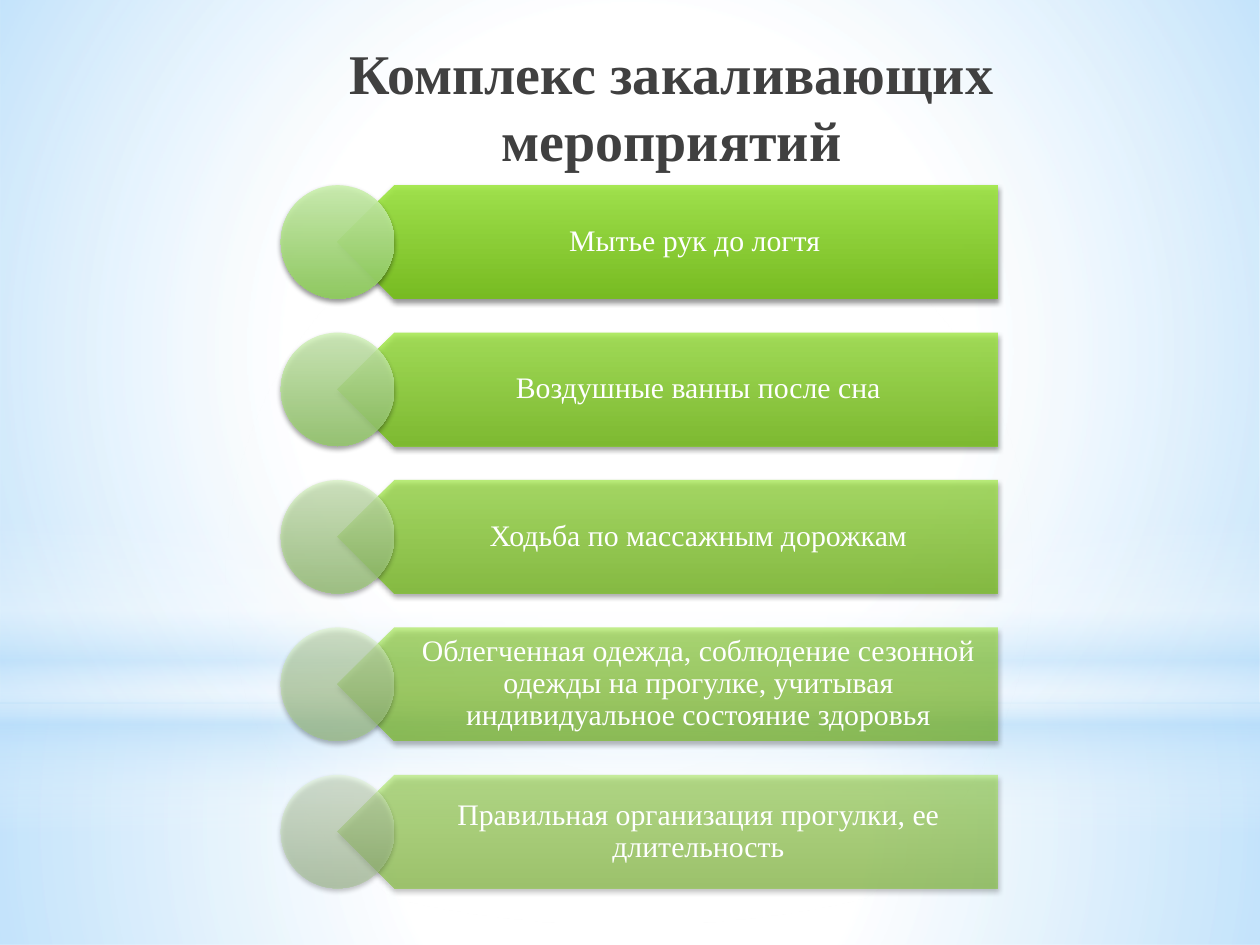
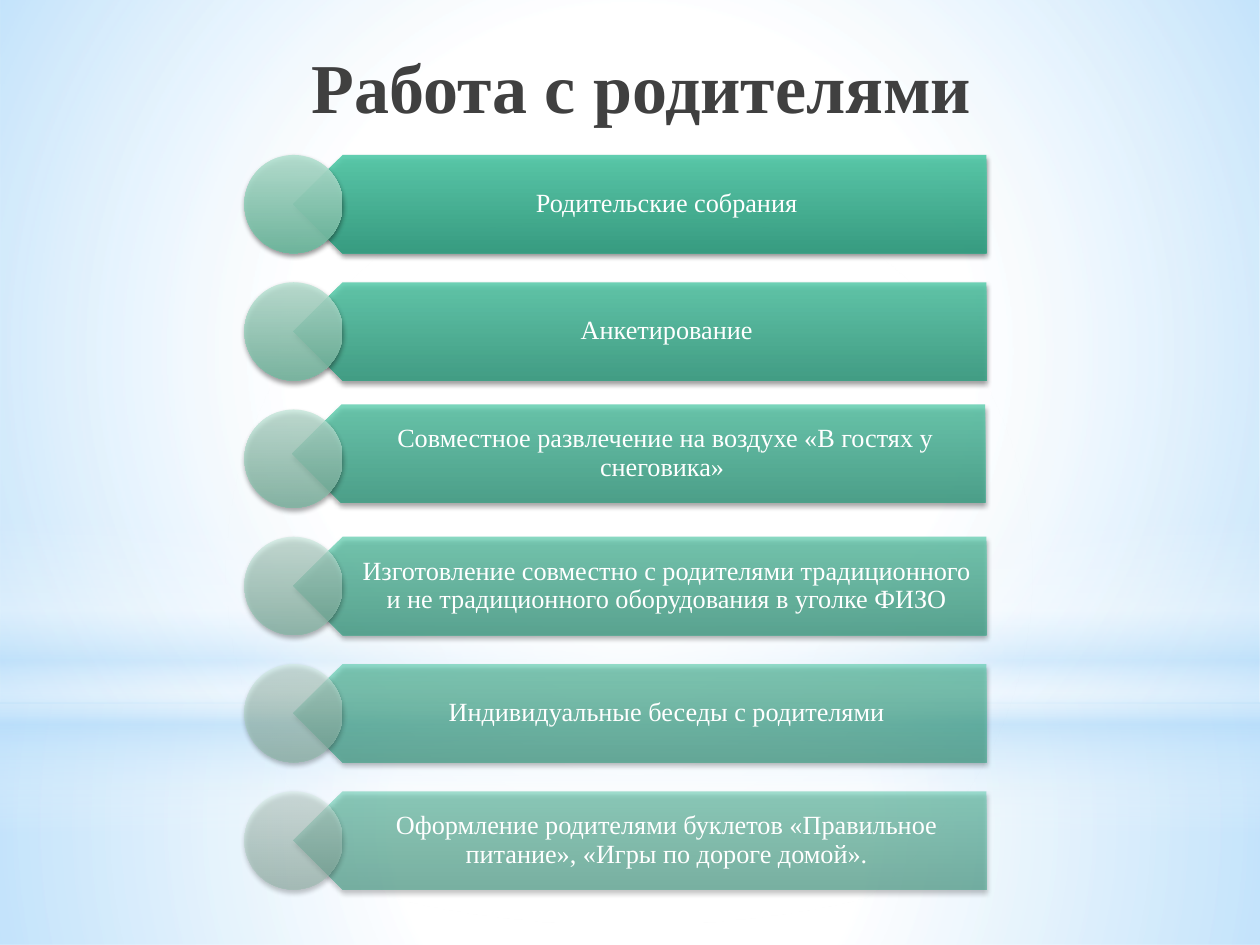
import dataclasses

import lxml.etree
import pptx
import pptx.dml.color
import pptx.enum.shapes
import pptx.enum.text
import pptx.oxml.ns
import pptx.util

COLUMNS, ROWS = 100, 75
CELL = pptx.util.Inches(0.1)
SHAPES = pptx.enum.shapes.MSO_SHAPE


@dataclasses.dataclass(frozen=True)
class Theme:
    font: str = "Times New Roman"
    white: str = "FFFFFF"
    sky: str = "B4DCFA"
    title: str = "404040"
    shadow: str = "000000"
    green: tuple = ("A0E844", "75C016")
    green_discs: tuple = (("CDF2B0", "8FCE5C"), ("E3F7D5", "A0C089"))
    teal: tuple = ("52CBA9", "2E9D7F")
    teal_discs: tuple = (("B5E2D2", "6BB89D"), ("D9EFE7", "90B6A8"))
    long_title: int = 32
    short_title: int = 40
    large_label: int = 17
    small_label: int = 15
    opaque: int = 90
    faded: int = 50


THEME = Theme()


@dataclasses.dataclass(frozen=True)
class Box:
    left: float
    top: float
    width: float
    height: float

    def emu(self):
        return [round(side * CELL) for side in dataclasses.astuple(self)]

    def inner(self, left, top, width, height):
        return Box(self.left + left, self.top + top, width, height)


PAGE = Box(0, 0, COLUMNS, ROWS)


def add_node(parent, tag, **attributes):
    node = lxml.etree.SubElement(parent, pptx.oxml.ns.qn(tag))
    for name, value in attributes.items():
        node.set(name, str(value))
    return node


def add_gradient_shape(page, kind, box, stops, radial=False):
    shape = page.shapes.add_shape(kind, *box.emu())
    shape.shadow.inherit = False
    shape.line.fill.background()
    shape.fill.background()
    properties = shape.element.spPr
    gradient = add_node(properties, "a:gradFill", rotWithShape=1)
    properties.replace(properties.find(pptx.oxml.ns.qn("a:noFill")), gradient)
    stop_list = add_node(gradient, "a:gsLst")
    for position, color, opacity in stops:
        stop = add_node(stop_list, "a:gs", pos=position * 1000)
        tint = add_node(stop, "a:srgbClr", val=color)
        add_node(tint, "a:alpha", val=round(opacity * 1000))
    if radial:
        focus = add_node(gradient, "a:path", path="circle")
        add_node(focus, "a:fillToRect", **dict.fromkeys("ltrb", 50000))
    else:
        add_node(gradient, "a:lin", ang=90 * 60000, scaled=0)
    return shape


def add_shadow(shape):
    effects = shape.element.spPr.find(pptx.oxml.ns.qn("a:effectLst"))
    shadow = add_node(effects, "a:outerShdw", blurRad=pptx.util.Pt(3.1),
                      dist=pptx.util.Pt(1.8), dir=90 * 60000, rotWithShape=0)
    tint = add_node(shadow, "a:srgbClr", val=THEME.shadow)
    add_node(tint, "a:alpha", val=45000)


def add_text(page, box, text, *, size, color, bold=False, spacing=1.0, insets=(1, 0.5, 1, 0.5)):
    frame = page.shapes.add_textbox(*box.emu()).text_frame
    frame.word_wrap = True
    frame.vertical_anchor = pptx.enum.text.MSO_ANCHOR.MIDDLE
    (frame.margin_left, frame.margin_top,
     frame.margin_right, frame.margin_bottom) = [round(inset * CELL) for inset in insets]
    para = frame.paragraphs[0]
    para.alignment = pptx.enum.text.PP_ALIGN.CENTER
    para.line_spacing = spacing
    span = para.add_run()
    span.text = text
    span.font.name = THEME.font
    span.font.size = pptx.util.Pt(size)
    span.font.bold = bold
    span.font.color.rgb = pptx.dml.color.RGBColor.from_string(color)


def add_backdrop(page, box):
    page.background.fill.solid()
    page.background.fill.fore_color.rgb = pptx.dml.color.RGBColor.from_string(THEME.white)
    white, sky = THEME.white, THEME.sky
    horizon = 55.8
    add_gradient_shape(page, SHAPES.RECTANGLE,
                       box.inner(0, horizon, box.width, box.height - horizon),
                       [(0, white, 91), (37, white, 76), (100, sky, 79)], radial=True)
    add_gradient_shape(page, SHAPES.RECTANGLE, box.inner(0, 0, box.width, horizon),
                       [(0, white, 89), (48, white, 62), (100, sky, 79)], radial=True)
    add_gradient_shape(page, SHAPES.RECTANGLE, box.inner(0, 41.2, box.width, 25),
                       [(0, white, 0), (29, white, 30), (45, sky, 40),
                        (55, white, 26), (65, sky, 60), (100, white, 0)])
    add_gradient_shape(page, SHAPES.OVAL, box.inner(0, 17.5, box.width, horizon),
                       [(0, white, 100), (56, white, 0)], radial=True)


def blend(start, end, share):
    pairs = zip(bytes.fromhex(start), bytes.fromhex(end))
    return "".join(f"{round(a + (b - a) * share):02X}" for a, b in pairs)


def add_row(page, box, label, *, size, plate_colors, disc_colors, opacity, nudge):
    side = box.height
    plate_box = box.inner(side / 2 + nudge[0], nudge[1], box.width - side / 2, side)
    plate = add_gradient_shape(page, SHAPES.PENTAGON, plate_box,
                               [(0, plate_colors[0], opacity), (100, plate_colors[1], opacity)])
    plate.element.spPr.find(pptx.oxml.ns.qn("a:xfrm")).set("flipH", "1")
    add_shadow(plate)
    add_text(page, plate_box.inner(side / 4, 0, plate_box.width - side / 4, side), label,
             size=size, color=THEME.white, spacing=0.9,
             insets=[side * share for share in (0.44, 0.08, 0.15, 0.08)])
    disc = add_gradient_shape(page, SHAPES.OVAL, box.inner(0, 0, side, side),
                              [(0, disc_colors[0], opacity), (100, disc_colors[1], opacity)])
    add_shadow(disc)


def add_list(page, box, labels, *, row_height, size, plate_colors, disc_range, nudges):
    last = len(labels) - 1
    pitch = (box.height - row_height) / last
    for index, label in enumerate(labels):
        share = index / last
        add_row(page, box.inner(0, index * pitch, box.width, row_height), label,
                size=size, plate_colors=plate_colors,
                disc_colors=[blend(a, b, share) for a, b in zip(*disc_range)],
                opacity=THEME.opaque + (THEME.faded - THEME.opaque) * share,
                nudge=nudges.get(index, (0, 0)))


def add_list_page(deck, title, title_box, title_size, list_box, labels, *, nudges=None, **style):
    page = deck.slides.add_slide(deck.slide_layouts[6])
    add_backdrop(page, PAGE)
    add_text(page, title_box, title, size=title_size, color=THEME.title, bold=True)
    add_list(page, list_box, labels, nudges=nudges or {}, **style)


def main():
    deck = pptx.Presentation()
    deck.slide_width, deck.slide_height = COLUMNS * CELL, ROWS * CELL
    add_list_page(
        deck, "Комплекс закаливающих мероприятий", Box(17.7, 2.1, 71.2, 12.5),
        THEME.long_title, Box(22.3, 14.7, 56.9, 55.8),
        ["Мытье рук до логтя ",
         "Воздушные ванны после сна",
         "Ходьба по массажным дорожкам",
         "Облегченная одежда, соблюдение сезонной одежды на прогулке, "
         "учитывая индивидуальное состояние здоровья",
         "Правильная организация прогулки, ее длительность"],
        row_height=9, size=THEME.large_label,
        plate_colors=THEME.green, disc_range=THEME.green_discs)
    add_list_page(
        deck, "Работа с родителями", Box(5.9, 2.1, 90, 9.3),
        THEME.short_title, Box(19.4, 12.3, 58.9, 58.3),
        ["Родительские собрания",
         "Анкетирование",
         "Совместное развлечение на воздухе «В гостях у снеговика» ",
         "Изготовление совместно с родителями традиционного "
         "и не традиционного оборудования в уголке ФИЗО",
         "Индивидуальные беседы с родителями",
         "Оформление родителями буклетов «Правильное питание», «Игры по дороге домой»."],
        row_height=7.8, size=THEME.small_label,
        plate_colors=THEME.teal, disc_range=THEME.teal_discs,
        nudges={2: (-0.1, -0.4)})
    deck.save("out.pptx")


if __name__ == "__main__":
    main()
